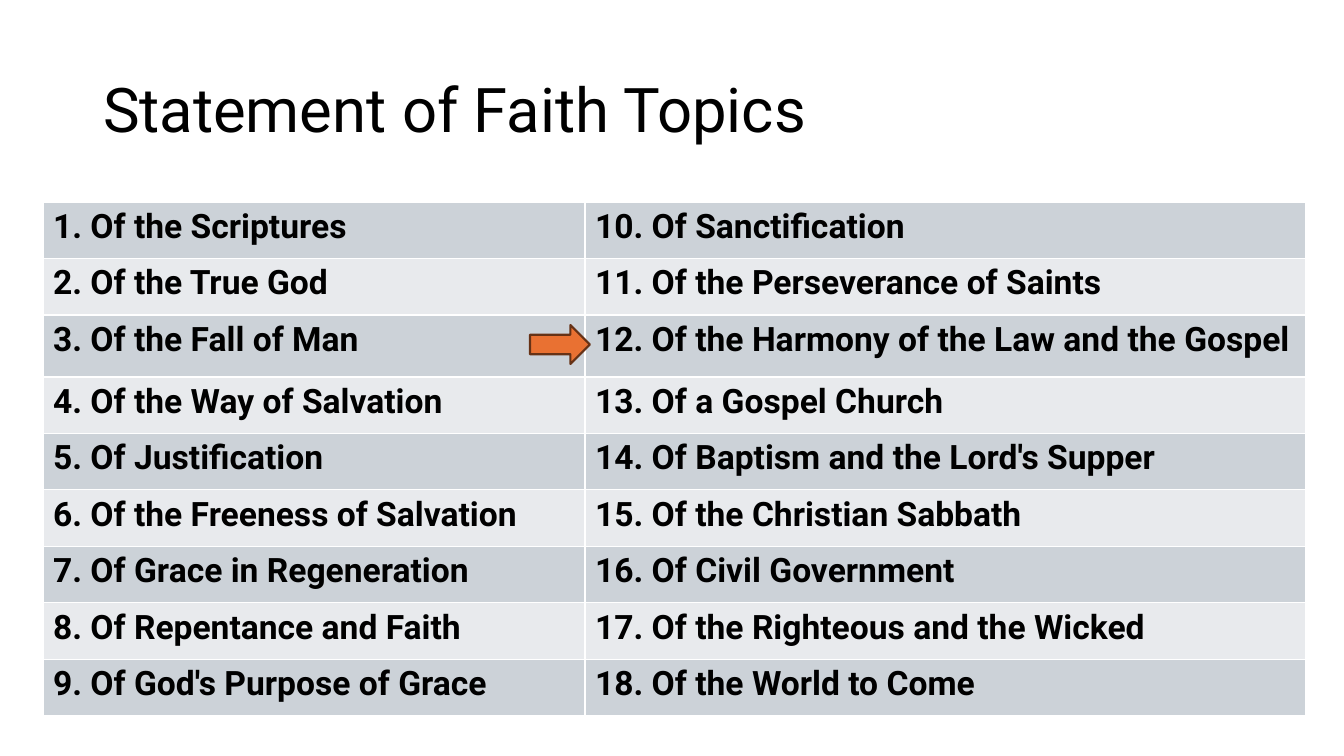
from dataclasses import dataclass

from lxml import etree
from pptx import Presentation
from pptx.dml.color import RGBColor
from pptx.enum import shapes, text
from pptx.oxml import ns
from pptx.util import Emu, Pt

EMU_PER_PX = 12192000 / 1344


@dataclass(frozen=True)
class Theme:
    font: str = "Roboto"
    ink: str = "000000"
    bands: tuple = ("CCD2D8", "E8EAED")
    border: str = "FFFFFF"
    arrow_fill: str = "E97132"
    arrow_line: str = "663216"
    title_size: int = 44
    topic_size: int = 24
    border_width: float = 1
    arrow_width: float = 1.5


THEME = Theme()

TOPICS = [
    "Of the Scriptures",
    "Of the True God",
    "Of the Fall of Man",
    "Of the Way of Salvation",
    "Of Justification",
    "Of the Freeness of Salvation",
    "Of Grace in Regeneration",
    "Of Repentance and Faith",
    "Of God's Purpose of Grace",
    "Of Sanctification",
    "Of the Perseverance of Saints",
    "Of the Harmony of the Law and the Gospel",
    "Of a Gospel Church",
    "Of Baptism and the Lord's Supper",
    "Of the Christian Sabbath",
    "Of Civil Government",
    "Of the Righteous and the Wicked",
    "Of the World to Come",
]
ROW_COUNT = len(TOPICS) // 2
TABLE_BOX = (43, 202, 1263, 514)
COLUMN_WIDTHS = (542, 721)
CURRENT_ROW = 2
CURRENT_ROW_HEIGHT = 62


def px(length):
    return Emu(round(length * EMU_PER_PX))


def set_attributes(target, values):
    for name, value in values.items():
        setattr(target, name, value)


def set_fill(fill, color):
    fill.solid()
    fill.fore_color.rgb = RGBColor.from_string(color)


def write(paragraph, words, size, bold=False):
    run = paragraph.add_run()
    run.text = words
    set_attributes(run.font, {"name": THEME.font, "size": Pt(size), "bold": bold})
    run.font.color.rgb = RGBColor.from_string(THEME.ink)


def add_title(slide, words, box):
    title = slide.shapes.title
    set_attributes(title, dict(zip(("left", "top", "width", "height"), map(px, box))))
    set_attributes(title.text_frame, {
        "vertical_anchor": text.MSO_ANCHOR.MIDDLE,
        "word_wrap": True,
    })
    paragraph = title.text_frame.paragraphs[0]
    set_attributes(paragraph, {"alignment": text.PP_ALIGN.LEFT, "line_spacing": 0.9})
    write(paragraph, words, THEME.title_size)


def set_borders(cell):
    properties = cell._tc.get_or_add_tcPr()
    for side in ("a:lnL", "a:lnR", "a:lnT", "a:lnB"):
        line = etree.SubElement(properties, ns.qn(side), w=str(Pt(THEME.border_width)))
        solid = etree.SubElement(line, ns.qn("a:solidFill"))
        etree.SubElement(solid, ns.qn("a:srgbClr"), val=THEME.border)


def add_topic_table(slide):
    frame = slide.shapes.add_table(ROW_COUNT, len(COLUMN_WIDTHS), *map(px, TABLE_BOX))
    table = frame.table
    set_attributes(table, {"first_row": False, "horz_banding": False})
    for column, width in zip(table.columns, COLUMN_WIDTHS):
        column.width = px(width)
    row_height = (TABLE_BOX[3] - CURRENT_ROW_HEIGHT) / (ROW_COUNT - 1)
    for index, row in enumerate(table.rows):
        row.height = px(CURRENT_ROW_HEIGHT if index == CURRENT_ROW else row_height)
    for index, topic in enumerate(TOPICS):
        column, row = divmod(index, ROW_COUNT)
        cell = table.cell(row, column)
        set_borders(cell)
        set_fill(cell.fill, THEME.bands[row % 2])
        write(cell.text_frame.paragraphs[0], f"{index + 1}. {topic}",
              THEME.topic_size, bold=True)


def add_arrow(slide, box):
    arrow = slide.shapes.add_shape(shapes.MSO_SHAPE.RIGHT_ARROW, *map(px, box))
    arrow.shadow.inherit = False
    set_fill(arrow.fill, THEME.arrow_fill)
    set_fill(arrow.line.fill, THEME.arrow_line)
    arrow.line.width = Pt(THEME.arrow_width)


def main():
    presentation = Presentation()
    set_attributes(presentation, {"slide_width": px(1344), "slide_height": px(756)})
    slide = presentation.slides.add_slide(presentation.slide_layouts[5])
    add_title(slide, "Statement of Faith Topics", (93, 40, 1159, 146))
    add_topic_table(slide)
    add_arrow(slide, (530, 325, 60, 39))
    presentation.save("out.pptx")


if __name__ == "__main__":
    main()
